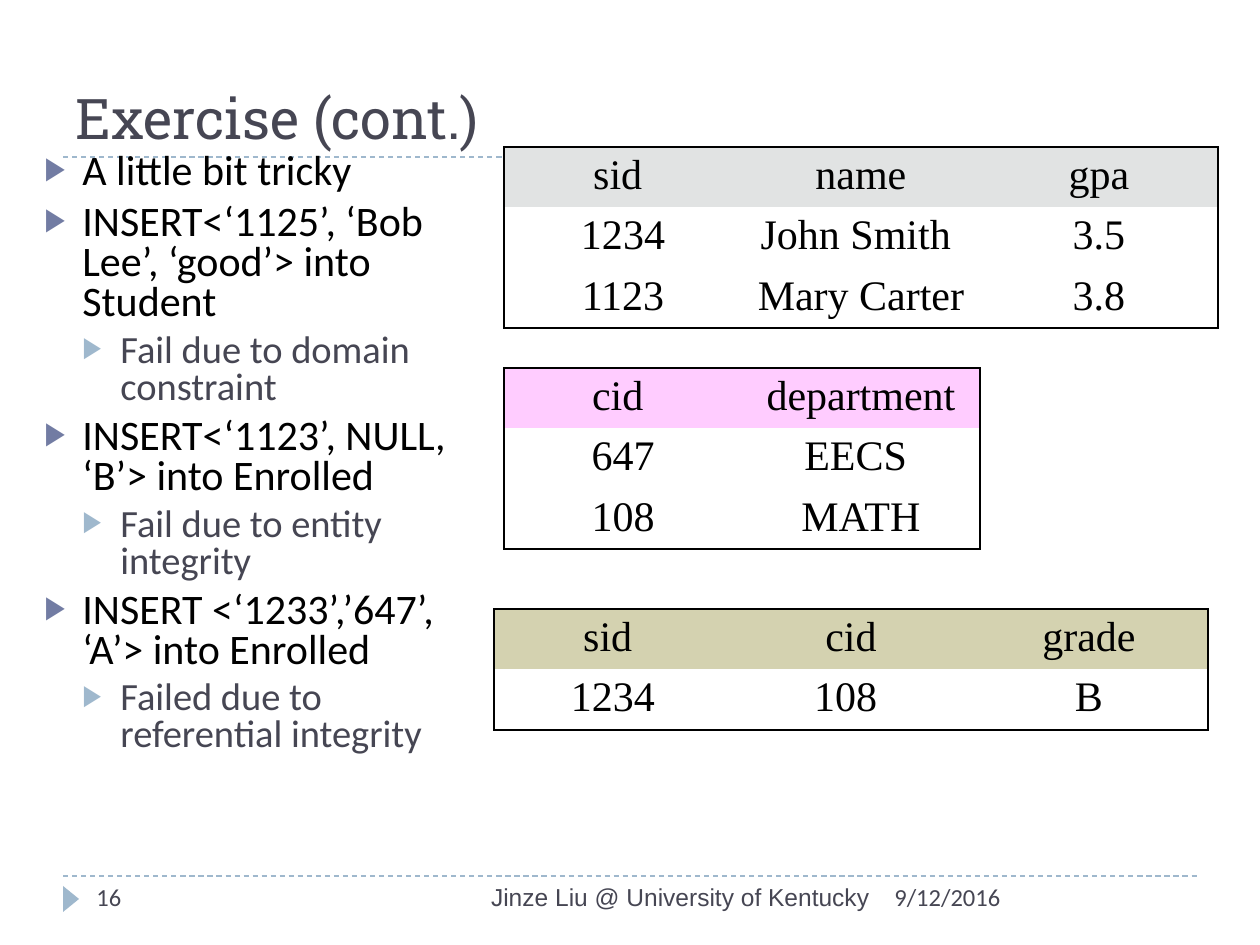
from lxml.etree import SubElement as Sub
from pptx import Presentation
from pptx.dml.color import RGBColor
from pptx.enum.dml import MSO_LINE
from pptx.enum.shapes import MSO_CONNECTOR, MSO_SHAPE
from pptx.enum.text import MSO_ANCHOR, MSO_AUTO_SIZE, PP_ALIGN
from pptx.oxml.ns import qn
from pptx.util import Emu, Pt

INK, BLACK, SKY, BLUE = "464653", "000000", "9FB8CD", "727CA3"
PLAIN = "{2D5ABB26-0587-4C30-8999-92F81FD0307C}"
COL, ROW, PAD = 238, 59, 5

POINTS = [
    (0, "A little bit tricky"),
    (0, "INSERT<‘1125’, ‘Bob Lee’, ‘good’> into Student"),
    (1, "Fail due to domain constraint"),
    (0, "INSERT<‘1123’, NULL, ‘B’> into Enrolled"),
    (1, "Fail due to entity integrity"),
    (0, "INSERT <‘1233’,’647’, ‘A’> into Enrolled"),
    (1, "Failed due to referential integrity"),
]
# Size, text colour, bullet colour and space before, by level
LEVELS = [(24, BLACK, BLUE, 6), (22, INK, SKY, 5)]

TABLES = [
    (504, 147, "E1E3E3", [["sid ", "name", "gpa"],
                          ["1234", "John Smith ", "3.5"],
                          ["1123", "Mary Carter ", "3.8"]]),
    (504, 368, "FFCCFF", [["cid ", "department"],
                          ["647", "EECS "],
                          ["108", "MATH"]]),
    (494, 609, "D4D2B0", [["sid ", "cid", "grade"],
                          ["1234", "108 ", "B"]]),
]


def px(n):
    return Emu(round(n * 914400 / 126))


def rgb(code):
    return RGBColor.from_string(code)


def write(para, text, size=14, font="Calibri", color=INK, align=PP_ALIGN.LEFT):
    para.alignment = align
    run = para.add_run()
    run.text = text
    run.font.size = Pt(size)
    run.font.name = font
    run.font.color.rgb = rgb(color)


def add_box(slide, x, y, w, h):
    frame = slide.shapes.add_textbox(px(x), px(y), px(w), px(h)).text_frame
    frame.word_wrap = True
    return frame


def set_title(slide, text):
    title = slide.shapes.title
    title.left, title.top, title.width, title.height = map(px, (63, 21, 1134, 136))
    frame = title.text_frame
    frame.auto_size = MSO_AUTO_SIZE.NONE
    frame.vertical_anchor = MSO_ANCHOR.BOTTOM
    write(frame.paragraphs[0], text, size=32, font="Roboto Slab")


def add_rule(slide, y):
    rule = slide.shapes.add_connector(
        MSO_CONNECTOR.STRAIGHT, px(63), px(y), px(1197), px(y))
    rule.line.color.rgb = rgb(SKY)
    rule.line.width = Pt(0.75)
    rule.line.dash_style = MSO_LINE.DASH
    Sub(rule.element.spPr, qn("a:effectLst"))


def add_marker(slide):
    mark = slide.shapes.add_shape(
        MSO_SHAPE.ISOSCELES_TRIANGLE, px(58), px(891), px(26), px(16))
    mark.rotation = 90
    mark.shadow.inherit = False
    mark.fill.solid()
    mark.fill.fore_color.rgb = rgb(SKY)
    mark.line.fill.background()


def set_bullet(para, level, color):
    props = para._p.get_or_add_pPr()
    props.set("marL", str(px(38 * (level + 1))))
    props.set("indent", str(px(-38)))
    Sub(Sub(props, qn("a:buClr")), qn("a:srgbClr"), val=color)
    Sub(props, qn("a:buSzPct"), val="76000")
    Sub(props, qn("a:buFont"), typeface="Arial")
    Sub(props, qn("a:buChar"), char="▶")


def add_points(slide):
    frame = add_box(slide, 32, 147, 462, 725)
    for i, (level, text) in enumerate(POINTS):
        para = frame.add_paragraph() if i else frame.paragraphs[0]
        size, color, tint, gap = LEVELS[level]
        para.level = level
        para.line_spacing = 0.8
        para.space_before = Pt(gap)
        set_bullet(para, level, tint)
        write(para, text, size=size, color=color)


def set_edges(cell, edges):
    """Draw the named sides (of L, R, T, B) in black."""
    props = cell._tc.get_or_add_tcPr()
    for side in edges:
        line = Sub(props, qn(f"a:ln{side}"), w=str(Pt(1)))
        Sub(Sub(line, qn("a:solidFill")), qn("a:srgbClr"), val=BLACK)


def add_grid(slide, x, y, tint, rows):
    high, wide = len(rows), len(rows[0])
    frame = slide.shapes.add_table(
        high, wide, px(x), px(y), px(COL * wide), px(ROW * high))
    for style in frame.element.iter(qn("a:tableStyleId")):
        style.text = PLAIN
    table = frame.table
    table.first_row = table.horz_banding = False
    for r, row in enumerate(rows):
        table.rows[r].height = px(ROW)
        for c, text in enumerate(row):
            cell = table.cell(r, c)
            cell.margin_top = cell.margin_bottom = px(PAD)
            outer = {"L": c == 0, "R": c == wide - 1,
                     "T": r == 0, "B": r == high - 1}
            set_edges(cell, [side for side, on in outer.items() if on])
            if r == 0:
                cell.fill.solid()
                cell.fill.fore_color.rgb = rgb(tint)
            else:
                cell.fill.background()
            write(cell.text_frame.paragraphs[0], text, size=24,
                  font="Times New Roman", color=BLACK, align=PP_ALIGN.CENTER)


def add_footer(slide):
    for x, w, text, style in [
        (882, 315, "9/12/2016", {}),
        (399, 483, "Jinze Liu @ University of Kentucky",
         {"font": "Arial", "align": PP_ALIGN.RIGHT}),
        (84, 273, "16", {}),
    ]:
        write(add_box(slide, x, 876, w, 50).paragraphs[0], text, **style)


def main():
    deck = Presentation()
    deck.slide_width, deck.slide_height = px(1260), px(945)
    slide = deck.slides.add_slide(deck.slide_layouts[5])
    for y in (876, 157):
        add_rule(slide, y)
    add_marker(slide)
    set_title(slide, "Exercise (cont.)")
    add_footer(slide)
    add_points(slide)
    for grid in TABLES:
        add_grid(slide, *grid)
    deck.save("out.pptx")


if __name__ == "__main__":
    main()
